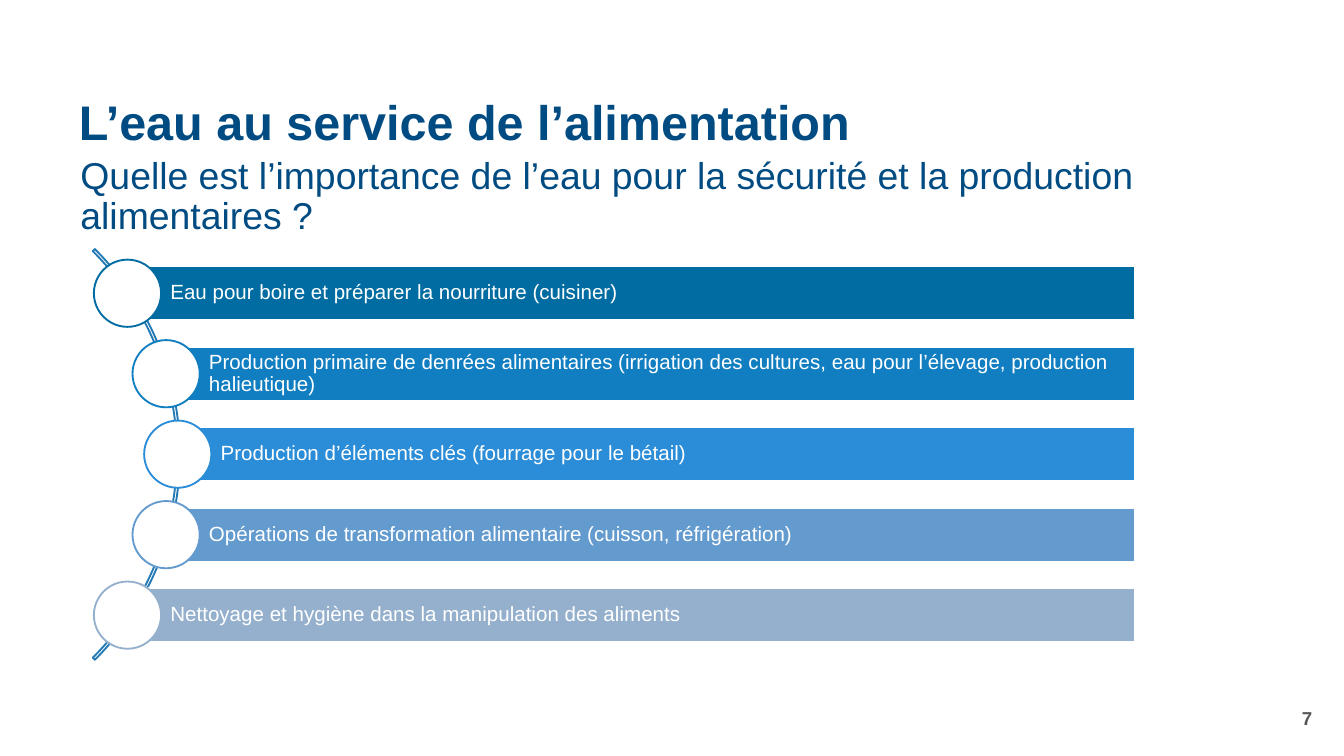
from lxml import etree
from pptx import Presentation
from pptx import util as u
from pptx.dml.color import RGBColor
from pptx.enum import shapes, text
from pptx.oxml import ns

NAVY = "004C82"
WHITE = "FFFFFF"


def style_text(shape, size, color, margins, bold=False, align=text.PP_ALIGN.LEFT):
    """Format the only paragraph; margins are left, top, right, bottom in cm."""
    frame = shape.text_frame
    frame.word_wrap = True
    frame.auto_size = text.MSO_AUTO_SIZE.NONE
    frame.margin_left, frame.margin_top, frame.margin_right, frame.margin_bottom = map(u.Cm, margins)
    paragraph = frame.paragraphs[0]
    paragraph.alignment = align
    paragraph.line_spacing = 0.9
    paragraph.space_before = u.Pt(0)
    font = paragraph.font
    font.name, font.size, font.bold = "Arial", u.Pt(size), bold
    font.color.rgb = RGBColor.from_string(color)


def add_outlined(kind, left, top, width, height, fill, line):
    shape = slide.shapes.add_shape(kind, u.Cm(left), u.Cm(top), u.Cm(width), u.Cm(height))
    shape.shadow.inherit = False
    if fill:
        shape.fill.solid()
        shape.fill.fore_color.rgb = RGBColor.from_string(fill)
    else:
        shape.fill.background()
    shape.line.color.rgb = RGBColor.from_string(line)
    shape.line.width = u.Pt(1)
    return shape


presentation = Presentation()
presentation.slide_width, presentation.slide_height = u.Cm(25.4), u.Cm(14.28)
slide = presentation.slides.add_slide(presentation.slide_layouts[1])

# Title and question
title = slide.shapes.title
title.left, title.top, title.width, title.height = u.Cm(1.24), u.Cm(1.6), u.Cm(23.8), u.Cm(1.5)
title.text_frame.text = "L’eau au service de l’alimentation"
title.text_frame.vertical_anchor = text.MSO_ANCHOR.MIDDLE
style_text(title, 26, NAVY, (0.25, 0.13, 0.25, 0.13), bold=True)

question = slide.placeholders[1]
question.left, question.top, question.width, question.height = u.Cm(1.27), u.Cm(2.97), u.Cm(23.8), u.Cm(0.76)
question.text_frame.text = (
    "Quelle est l’importance de l’eau pour la sécurité et la production alimentaires ?"
)
properties = question.text_frame.paragraphs[0]._p.get_or_add_pPr()
properties.set("marL", "0")
properties.set("indent", "0")
etree.SubElement(properties, ns.qn("a:buNone"))
style_text(question, 20, NAVY, (0.25, 0, 0.2, 0))

# Curve that links the circles
arc = add_outlined(shapes.MSO_SHAPE.BLOCK_ARC, -7.57, 3.1, 10.97, 10.97, None, "2279B3")
arc.adjustments[0], arc.adjustments[1], arc.adjustments[2] = 189, 27, 0.005

# Bars with their circles: text, left edge, colour
uses = [
    ("Eau pour boire et préparer la nourriture (cuisiner)", 2.41, "006CA2"),
    ("Production primaire de denrées alimentaires (irrigation des cultures, "
     "eau pour l’élevage, production halieutique)", 3.14, "117EC1"),
    ("Production d’éléments clés (fourrage pour le bétail)", 3.36, "2B8DD7"),
    ("Opérations de transformation alimentaire (cuisson, réfrigération)", 3.14, "649BCE"),
    ("Nettoyage et hygiène dans la manipulation des aliments", 2.41, "95B0CD"),
]
BAR_RIGHT, BAR_TOP, BAR_HEIGHT, PITCH = 21.46, 5.03, 1.02, 1.52
DIAMETER = 1.27

for row, (label, left, color) in enumerate(uses):
    top = BAR_TOP + row * PITCH
    bar = add_outlined(shapes.MSO_SHAPE.RECTANGLE, left, top, BAR_RIGHT - left, BAR_HEIGHT, color, WHITE)
    bar.text_frame.text = label
    bar.text_frame.vertical_anchor = text.MSO_ANCHOR.MIDDLE
    style_text(bar, 11, WHITE, (0.81, 0.08, 0.08, 0.08))
    add_outlined(shapes.MSO_SHAPE.OVAL, left - DIAMETER / 2, top + (BAR_HEIGHT - DIAMETER) / 2,
                 DIAMETER, DIAMETER, WHITE, color)

# Page number
number = slide.shapes.add_textbox(u.Cm(19.33), u.Cm(13.21), u.Cm(5.72), u.Cm(0.76))
number.text_frame.text = "7"
number.text_frame.vertical_anchor = text.MSO_ANCHOR.MIDDLE
style_text(number, 10, "575756", (0.25, 0.13, 0.25, 0.13), bold=True, align=text.PP_ALIGN.RIGHT)

presentation.save("out.pptx")
